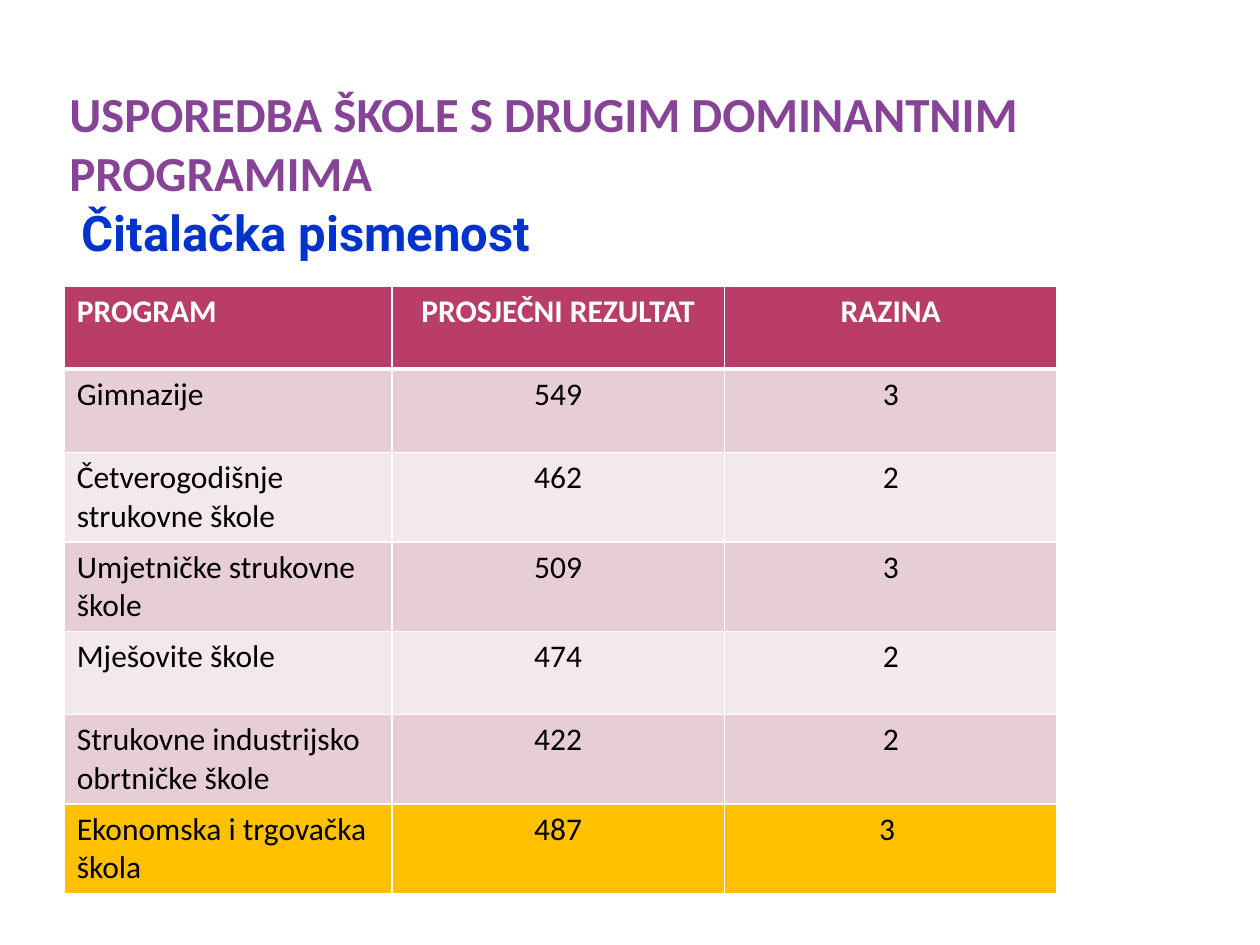
"""Build the slide comparing the school's reading literacy with other programmes."""
from lxml.etree import SubElement
from pptx import Presentation
from pptx.dml.color import RGBColor
from pptx.enum.text import MSO_ANCHOR, MSO_AUTO_SIZE, PP_ALIGN
from pptx.oxml.ns import qn
from pptx.util import Inches, Pt

TITLE = "USPOREDBA ŠKOLE S DRUGIM DOMINANTNIM PROGRAMIMA"
SUBTITLE = "Čitalačka pismenost"
ROWS = [
    ("PROGRAM", "PROSJEČNI REZULTAT", "RAZINA"),
    ("Gimnazije", "549", "3"),
    ("Četverogodišnje strukovne škole", "462", "2"),
    ("Umjetničke strukovne škole", "509", "3"),
    ("Mješovite škole", "474", "2"),
    ("Strukovne industrijsko obrtničke škole", "422", "2"),
    ("Ekonomska i trgovačka škola", "487", "3 "),
]
COLORS = {
    "title": "874396", "outline": "5E1A50", "subtitle": "0033CC",
    "header": "B83D68", "odd": "E6CED4", "even": "F3E8EB",
    "school": "FFC000", "white": "FFFFFF", "black": "000000",
}
COLUMN_WIDTHS = (2.6, 2.64, 2.64)
ROW_HEIGHT = 0.66


def style(paragraph, font_name, size, color, bold, alignment=PP_ALIGN.LEFT):
    paragraph.alignment = alignment
    font = paragraph.font
    font.name, font.size, font.bold = font_name, Pt(size), bold
    font.color.rgb = RGBColor.from_string(COLORS[color])


def add_line(parent, tag, width, color, position):
    line = SubElement(parent, qn(tag), w=str(Pt(width)))
    fill = SubElement(line, qn("a:solidFill"))
    SubElement(fill, qn("a:srgbClr"), val=COLORS[color])
    parent.insert(position, line)


def row_color(row):
    if row == 0:
        return "header"
    if row == len(ROWS) - 1:
        return "school"
    return "odd" if row % 2 else "even"


def add_title(slide):
    title = slide.shapes.title
    title.left, title.top = Inches(0.5), Inches(0.35)
    title.width, title.height = Inches(7.92), Inches(1.25)
    frame = title.text_frame
    frame.text = TITLE
    frame.word_wrap = True
    frame.auto_size = MSO_AUTO_SIZE.NONE
    frame.vertical_anchor = MSO_ANCHOR.BOTTOM
    frame.margin_left = frame.margin_right = Inches(0.05)
    frame.margin_top = frame.margin_bottom = 0
    paragraph = frame.paragraphs[0]
    style(paragraph, "Calibri", 28, "title", True)
    add_line(paragraph.runs[0].font._element, "a:ln", 0.04, "outline", 0)


def add_results(slide):
    frame = slide.shapes.add_table(
        len(ROWS), len(COLUMN_WIDTHS), Inches(0.51), Inches(2.27),
        Inches(sum(COLUMN_WIDTHS)), Inches(ROW_HEIGHT * len(ROWS)))
    table = frame.table
    table.horz_banding = False
    for column, width in zip(table.columns, COLUMN_WIDTHS):
        column.width = Inches(width)
    for row, values in enumerate(ROWS):
        table.rows[row].height = Inches(ROW_HEIGHT)
        header = row == 0
        borders = {"L": 1, "R": 1, "T": 3 if row == 1 else 1, "B": 3 if header else 1}
        for column, value in enumerate(values):
            cell = table.cell(row, column)
            cell.text = value
            style(cell.text_frame.paragraphs[0], "Calibri", 18,
                  "white" if header else "black", header,
                  PP_ALIGN.CENTER if column else PP_ALIGN.LEFT)
            cell.fill.solid()
            cell.fill.fore_color.rgb = RGBColor.from_string(COLORS[row_color(row)])
            properties = cell._tc.get_or_add_tcPr()
            for position, (side, width) in enumerate(borders.items()):
                add_line(properties, f"a:ln{side}", width, "white", position)


def add_subtitle(slide):
    box = slide.shapes.add_textbox(Inches(0.55), Inches(1.56), Inches(6.48), Inches(0.57))
    frame = box.text_frame
    frame.word_wrap = True
    frame.auto_size = MSO_AUTO_SIZE.SHAPE_TO_FIT_TEXT
    frame.text = SUBTITLE
    style(frame.paragraphs[0], "Roboto", 28, "subtitle", True)


def main():
    presentation = Presentation()
    presentation.slide_width, presentation.slide_height = Inches(10), Inches(7.5)
    slide = presentation.slides.add_slide(presentation.slide_layouts[5])
    add_title(slide)
    add_results(slide)
    add_subtitle(slide)
    presentation.save("out.pptx")


if __name__ == "__main__":
    main()
